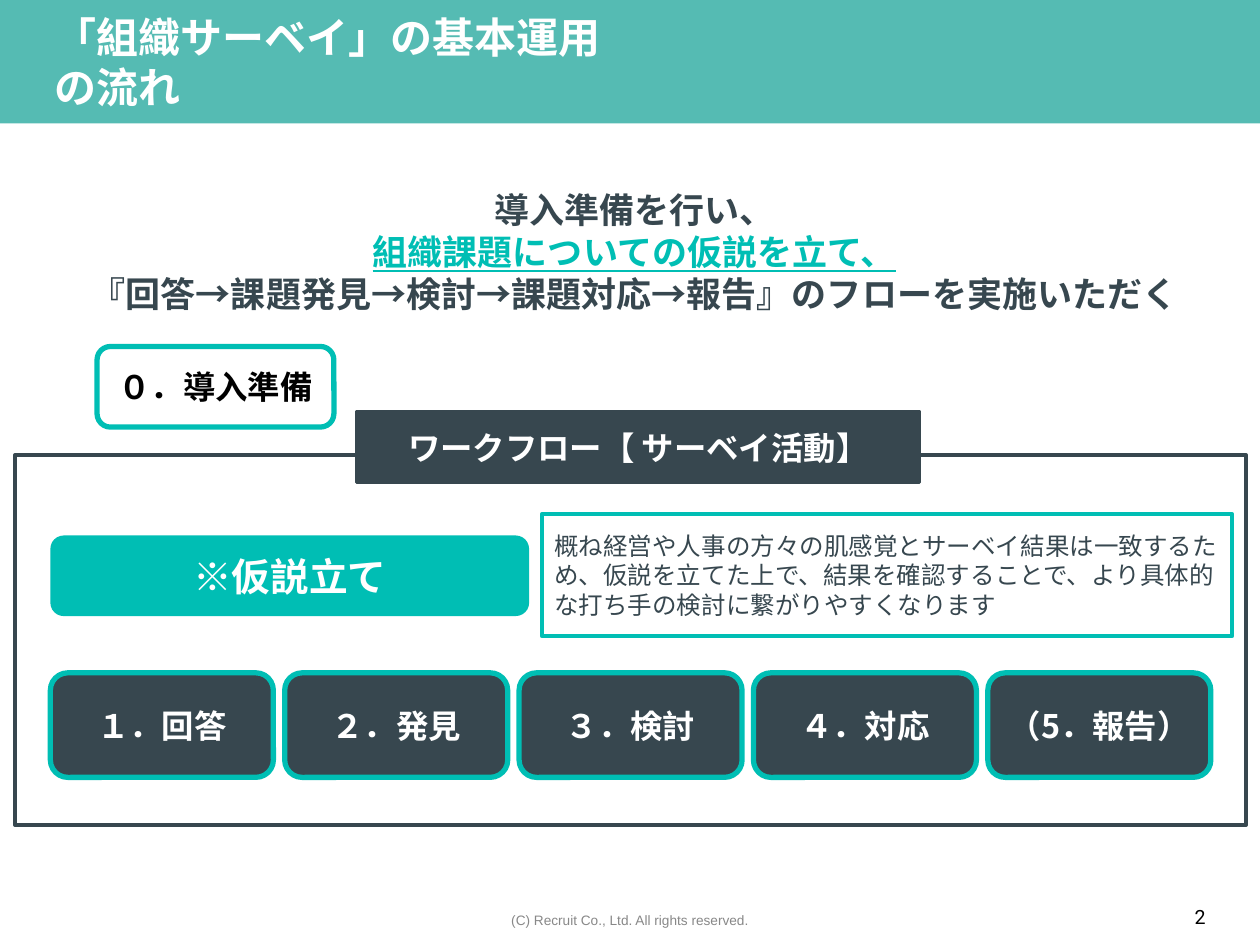
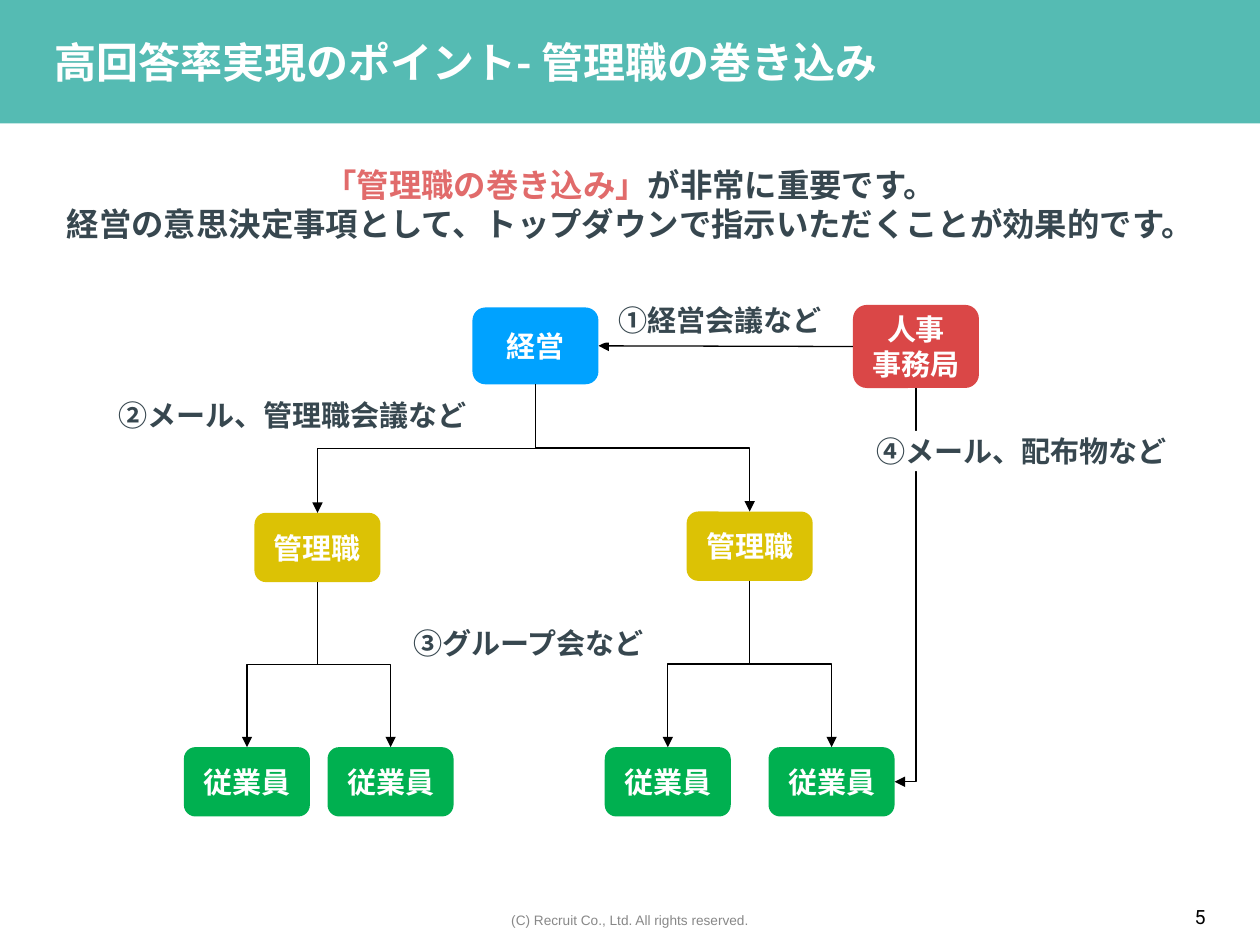
from lxml import etree
from pptx import Presentation
from pptx.dml.color import RGBColor
from pptx.enum import shapes, text
from pptx.oxml.ns import qn
from pptx.util import Inches, Pt

BAND = RGBColor(0x55, 0xBB, 0xB3)
TEAL = RGBColor(0x00, 0xBE, 0xB4)
SLATE = RGBColor(0x37, 0x47, 0x4F)
WHITE = RGBColor(0xFF, 0xFF, 0xFF)
BLACK = RGBColor(0x00, 0x00, 0x00)
GRAY = RGBColor(0x88, 0x88, 0x88)
PINK = RGBColor(0xE1, 0x6B, 0x6B)
RED = RGBColor(0xDA, 0x47, 0x47)
BLUE = RGBColor(0x00, 0xA2, 0xFF)
GOLD = RGBColor(0xDC, 0xC2, 0x05)
GREEN = RGBColor(0x00, 0xB0, 0x50)

FONT = "Noto Sans CJK JP"
RECT = shapes.MSO_SHAPE.RECTANGLE
ROUND = shapes.MSO_SHAPE.ROUNDED_RECTANGLE
LEFT, CENTER = text.PP_ALIGN.LEFT, text.PP_ALIGN.CENTER
TOP, MIDDLE = text.MSO_ANCHOR.TOP, text.MSO_ANCHOR.MIDDLE


def add_box(s, kind, at, paras=(), size=18.5, color=WHITE, bold=True, font=FONT, fill=None,
            line=None, align=CENTER, anchor=MIDDLE, ins=(0.1, 0.05)):
    """Add a shape (a text box if kind is None).

    paras lists paragraphs, each a list of runs (text, colour, underline);
    line is (colour, points); ins is the side and the top/bottom inset.
    """
    pos = [Inches(v) for v in at]
    if kind is None:
        sp = s.shapes.add_textbox(*pos)
    else:
        sp = s.shapes.add_shape(kind, *pos)
        sp.shadow.inherit = False
        if fill is None:
            sp.fill.background()
        else:
            sp.fill.solid()
            sp.fill.fore_color.rgb = fill
        if line is None:
            sp.line.fill.background()
        else:
            sp.line.color.rgb, sp.line.width = line[0], Pt(line[1])
    tf = sp.text_frame
    tf.word_wrap = True
    tf.vertical_anchor = anchor
    tf.margin_left = tf.margin_right = Inches(ins[0])
    tf.margin_top = tf.margin_bottom = Inches(ins[1])
    for i, runs in enumerate(paras):
        p = tf.paragraphs[0] if i == 0 else tf.add_paragraph()
        p.alignment = align
        for words, *style in runs:
            r = p.add_run()
            r.text = words
            f = r.font
            f.size, f.bold, f.name = Pt(size), bold, font
            f.color.rgb = style[0] if style else color
            if len(style) > 1:
                f.underline = style[1]
            etree.SubElement(r._r.get_or_add_rPr(), qn("a:ea"), typeface=font)
    return sp


def add_arrow(s, start, start_site, end, end_site, preset=None):
    """Join two boxes; with a bent preset the line leaves start downwards."""
    kind = shapes.MSO_CONNECTOR.ELBOW if preset else shapes.MSO_CONNECTOR.STRAIGHT
    c = s.shapes.add_connector(kind, 0, 0, 0, 0)
    c.begin_connect(start, start_site)
    c.end_connect(end, end_site)
    if preset:
        dx, dy = c.end_x - c.begin_x, c.end_y - c.begin_y
        mid_x, mid_y = (c.begin_x + c.end_x) // 2, (c.begin_y + c.end_y) // 2
        c.left, c.top = mid_x - dy // 2, mid_y - abs(dx) // 2
        c.width, c.height = dy, abs(dx)
        xfrm = c._element.spPr.find(qn("a:xfrm"))
        xfrm.set("rot", str((270 if dx > 0 else 90) * 60000))
        xfrm.set("flipH", "1" if dx > 0 else "0")
        xfrm.set("flipV", "0")
        c._element.spPr.find(qn("a:prstGeom")).set("prst", preset)
    c.line.color.rgb, c.line.width = BLACK, Pt(0.75)
    etree.SubElement(c.line._get_or_add_ln(), qn("a:tailEnd"), type="triangle")
    etree.SubElement(c._element.spPr, qn("a:effectLst"))


prs = Presentation()
prs.slide_width, prs.slide_height = Inches(10), Inches(7.5)

# Band, title, footer and page number of every slide
slides = []
for title, title_width, number in [("「組織サーベイ」の基本運用の流れ", 4.47, "2"),
                                   ("高回答率実現のポイント- 管理職の巻き込み", 6.64, "5")]:
    s = prs.slides.add_slide(prs.slide_layouts[6])
    add_box(s, RECT, (0, 0, 10, 0.98), fill=BAND)
    add_box(s, None, (2.22, 7.19, 5.56, 0.23), [[("(C) Recruit Co., Ltd. All rights reserved.",)]],
            size=7.8, color=GRAY, bold=False, font="Arial", ins=(0.03, 0.05))
    add_box(s, None, (0.43, 0.29, title_width, 0.4), [[(title,)]], size=24, align=LEFT, ins=(0, 0))
    add_box(s, None, (9.23, 7.12, 0.59, 0.29), [[(number,)]], size=11.2, color=BLACK, bold=False,
            font="Roboto", anchor=TOP, ins=(0.06, 0.06))
    slides.append(s)

# Slide 1: workflow
s = slides[0]
add_box(s, None, (0.52, 1.45, 9.03, 1.11),
        [[("導入準備を行い、",)],
         [("組織課題についての仮説を立て、", TEAL, True)],
         [("『回答→課題発見→検討→課題対応→報告』のフローを実施いただく",)]],
        size=20, color=SLATE, anchor=TOP)
tight = (0.04, 0.04)
for i, step in enumerate(["１．回答", "２．発見", "３．検討", "４．対応", "（5．報告）"]):
    add_box(s, ROUND, (0.4 + 1.86 * i, 5.34, 1.77, 0.83), [[(step,)]],
            fill=SLATE, line=(TEAL, 3), ins=tight)
add_box(s, RECT, (0.12, 3.61, 9.77, 2.94), line=(SLATE, 2))
add_box(s, RECT, (2.83, 3.27, 4.47, 0.56), [[("ワークフロー【 サーベイ活動】",)]],
        fill=SLATE, line=(SLATE, 2))
add_box(s, ROUND, (0.77, 2.75, 1.88, 0.64), [[("０．導入準備",)]], color=BLACK,
        line=(TEAL, 3), ins=tight)
add_box(s, ROUND, (0.4, 4.25, 3.8, 0.64), [[("※仮説立て",)]], size=22.1, fill=TEAL, ins=tight)
add_box(s, RECT, (4.3, 4.08, 5.48, 0.97),
        [[("概ね経営や人事の方々の肌感覚とサーベイ結果は一致するため、仮説を立てた上で、"
           "結果を確認することで、より具体的な打ち手の検討に繋がりやすくなります",)]],
        size=14, color=SLATE, bold=False, fill=WHITE, line=(TEAL, 2.25), align=LEFT)

# Slide 2: who instructs whom
s = slides[1]
add_box(s, None, (0, 1.26, 10, 0.72),
        [[("「管理職の巻き込み」", PINK), ("が非常に重要です。",)],
         [("経営の意思決定事項として、トップダウンで指示いただくことが効果的です。",)]],
        color=SLATE, anchor=TOP)

nodes = []
for x, y, h, fill, lines in [(6.77, 2.42, 0.66, RED, ["人事", "事務局"]),
                             (3.75, 2.44, 0.61, BLUE, ["経営"]),
                             (2.02, 4.07, 0.55, GOLD, ["管理職"]),
                             (5.45, 4.06, 0.55, GOLD, ["管理職"]),
                             (1.46, 5.93, 0.55, GREEN, ["従業員"]),
                             (2.6, 5.93, 0.55, GREEN, ["従業員"]),
                             (4.8, 5.93, 0.55, GREEN, ["従業員"]),
                             (6.1, 5.93, 0.55, GREEN, ["従業員"])]:
    nodes.append(add_box(s, ROUND, (x, y, 1, h), [[(words,)] for words in lines],
                         size=16.6, fill=fill, ins=(0.09, 0.05)))
hr, board, *managers = nodes[:4]
staff = nodes[4:]

SITE_TOP, SITE_LEFT, SITE_BOTTOM, SITE_RIGHT = range(4)
add_arrow(s, hr, SITE_LEFT, board, SITE_RIGHT)
for upper, lowers in [(board, managers), (managers[0], staff[:2]), (managers[1], staff[2:])]:
    for lower in lowers:
        add_arrow(s, upper, SITE_BOTTOM, lower, SITE_TOP, "bentConnector3")
add_arrow(s, hr, SITE_BOTTOM, staff[-1], SITE_RIGHT, "bentConnector2")

for at, label in [((4.77, 2.36, 1.89, 0.36), "①経営会議など"),
                  ((6.83, 3.42, 2.55, 0.32), "④メール、配布物など"),
                  ((0.72, 3.13, 3.2, 0.32), "②メール、管理職会議など"),
                  ((3.13, 4.94, 2.13, 0.32), "③グループ会など")]:
    add_box(s, RECT, at, [[(label,)]], size=16.6, color=SLATE, fill=WHITE)

prs.save("out.pptx")
